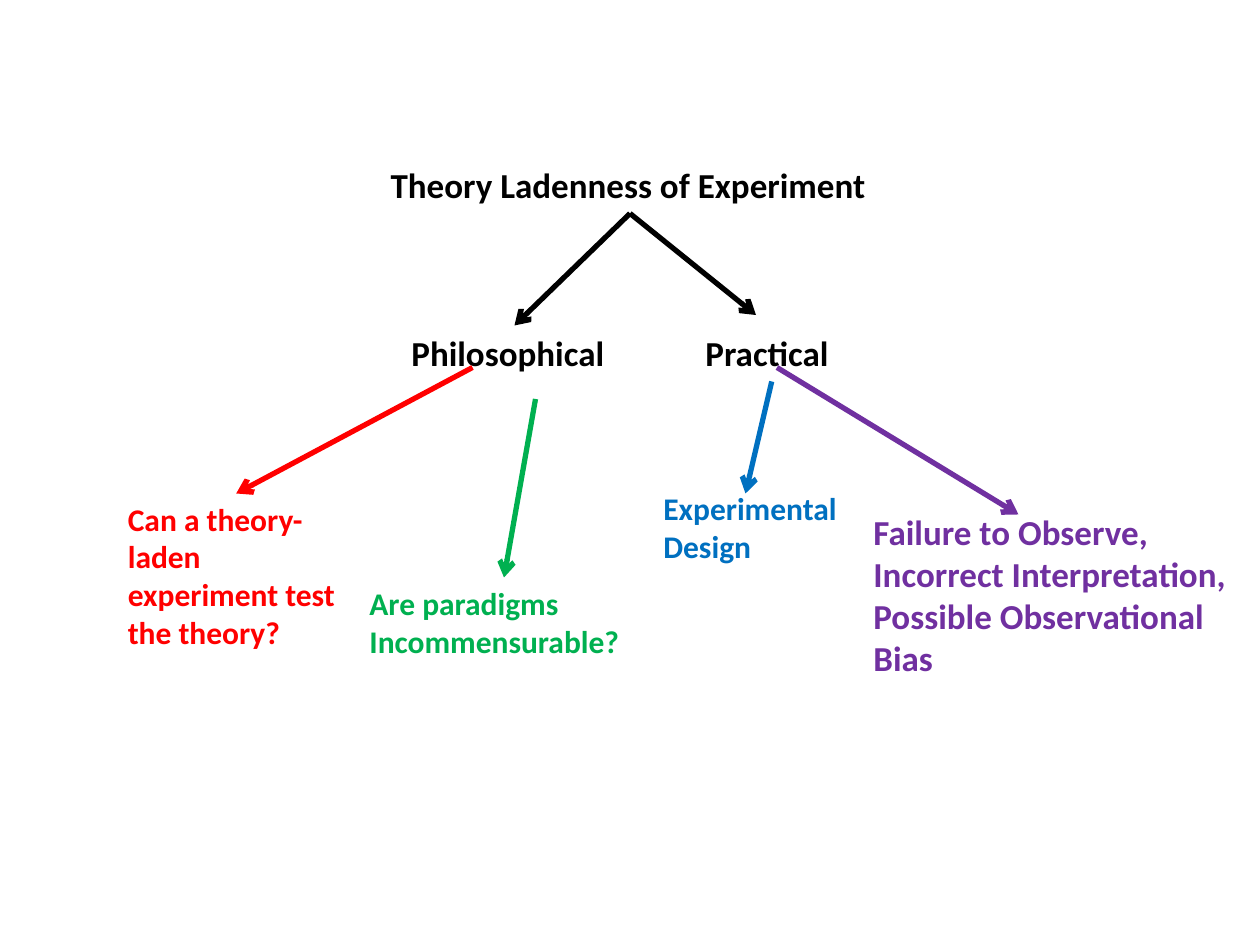
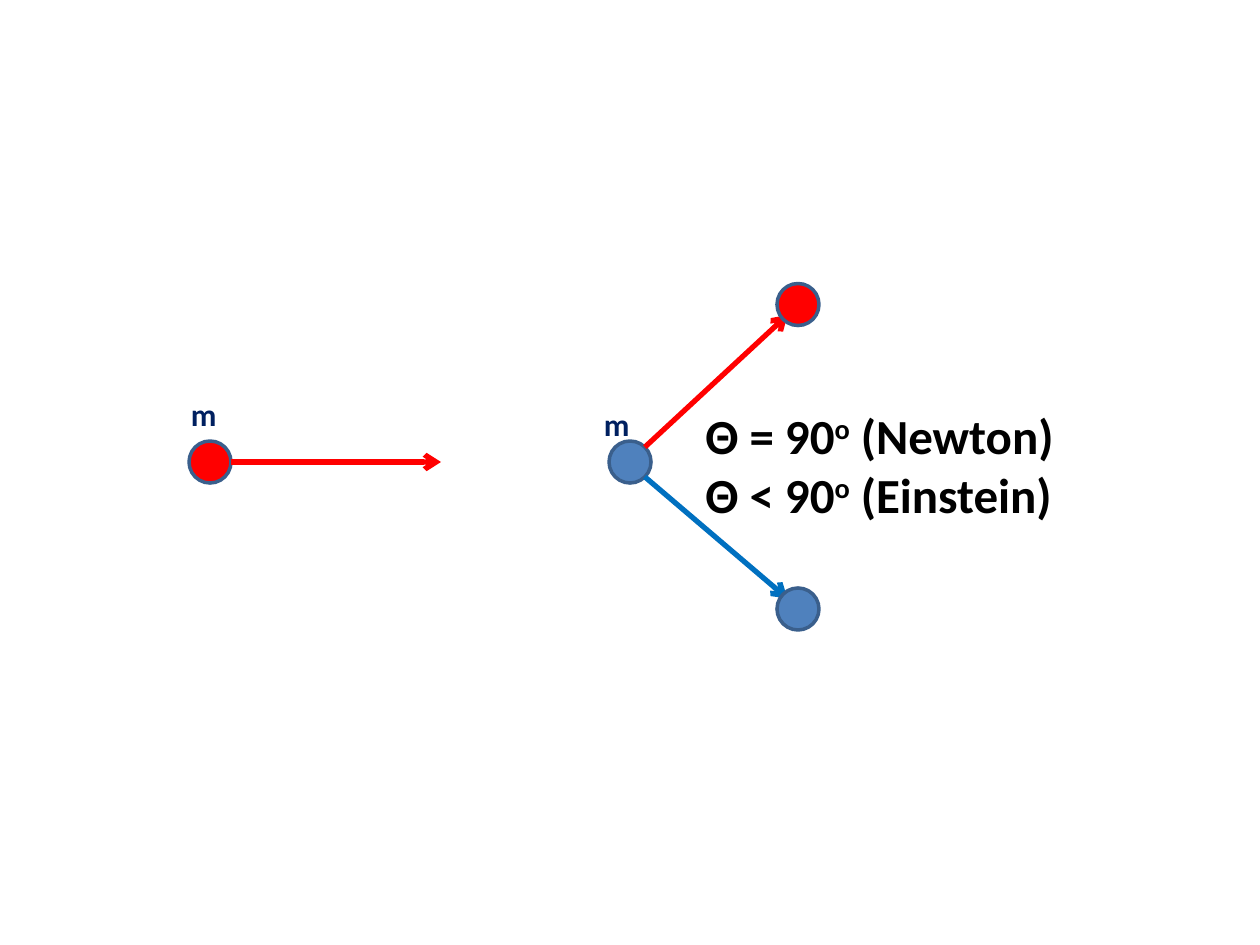
from lxml import etree
from pptx import Presentation
from pptx.dml.color import RGBColor
from pptx.enum import shapes, text
from pptx.oxml import ns
from pptx.util import Pt

COLORS = {
    "black": "000000", "red": "FF0000", "green": "00B050", "blue": "0070C0",
    "purple": "7030A0", "navy": "002060", "steel": "4F81BD", "rim": "3A5F8C",
}
FONT = "Calibri"
LINE_WIDTH = 3
BALL_SIZE = 24

TITLE = ("Theory Ladenness of Experiment", (216, 90, 288, 32), 20, "black")
TOPICS = {
    "philosophical": (["Philosophical"], (228, 186, 126, 32), 20, "black"),
    "practical": (["Practical"], (396, 186, 90, 32), 20, "black"),
    "paradigms": (["Are paradigms Incommensurable?"], (204, 330, 168, 51), 18, "green"),
    "design": (["Experimental Design"], (372, 276, 144, 51), 18, "blue"),
    "bias": (
        ["Failure to Observe,", "Incorrect Interpretation, Possible Observational Bias"],
        (492, 288, 228, 128), 20, "purple",
    ),
    "test": (["Can a theory-laden experiment test the theory?"], (66, 282, 138, 94), 18, "red"),
}
BRANCHES = [
    ((360, 122), (432, 180), "black", "title", None),
    ((360, 122), (294, 186), "black", "title", None),
    ((270, 210), (135, 282), "red", None, "test"),
    ((306, 228), (288, 330), "green", None, "paradigms"),
    ((441, 218), (426, 282), "blue", "practical", None),
    ((444, 210), (582, 294), "purple", None, None),
]

BALLS_BEFORE = [((108, 252), "red"), ((348, 252), "steel")]
BALLS_AFTER = [((444, 162), "red"), ((444, 336), "steel")]
PATHS = [
    ((132, 264), (252, 264), "red"),
    ((368.5, 255.5), (450, 180), "red"),
    ((368.5, 272.5), (450, 342), "blue"),
]
MASS_LABELS = [(102, 222, 36, 29), (338, 228, 42, 29)]
ANGLES = [("Θ = 90", "o", " (Newton)"), ("Θ < 90", "o", " (Einstein)")]
ANGLES_BOX = (396, 228, 228, 109)


def color(name):
    return RGBColor.from_string(COLORS[name])


def points(values):
    return [Pt(value) for value in values]


def format_text(shape, size, color_name):
    frame = shape.text_frame
    frame.word_wrap = True
    frame.auto_size = text.MSO_AUTO_SIZE.SHAPE_TO_FIT_TEXT
    frame.vertical_anchor = text.MSO_ANCHOR.TOP
    for paragraph in frame.paragraphs:
        paragraph.alignment = text.PP_ALIGN.LEFT
        font = paragraph.font
        font.name, font.size, font.bold = FONT, Pt(size), True
        font.color.rgb = color(color_name)


def add_text(slide, lines, box, size, color_name):
    shape = slide.shapes.add_textbox(*points(box))
    shape.text_frame.text = "\n".join(lines)
    format_text(shape, size, color_name)
    return shape


def add_title(slide, wording, box, size, color_name):
    title = slide.shapes.title
    title.left, title.top, title.width, title.height = points(box)
    title.text_frame.text = wording
    format_text(title, size, color_name)
    return title


def add_arrow(slide, start, end, color_name):
    arrow = slide.shapes.add_connector(
        shapes.MSO_CONNECTOR.STRAIGHT, *points(start + end))
    arrow.line.color.rgb = color(color_name)
    arrow.line.width = Pt(LINE_WIDTH)
    etree.SubElement(arrow.line._get_or_add_ln(), ns.qn("a:tailEnd"), type="arrow")
    etree.SubElement(arrow._element.spPr, ns.qn("a:effectLst"))
    return arrow


def add_balls(slide, balls, kind):
    for position, color_name in balls:
        ball = slide.shapes.add_shape(kind, *points(position + (BALL_SIZE, BALL_SIZE)))
        ball.shadow.inherit = False
        ball.fill.solid()
        ball.fill.fore_color.rgb = color(color_name)
        ball.line.color.rgb = color("rim")
        ball.line.width = Pt(2)


def build_theory_tree(presentation):
    slide = presentation.slides.add_slide(presentation.slide_layouts[5])
    nodes = {"title": add_title(slide, *TITLE)}
    for name, topic in TOPICS.items():
        nodes[name] = add_text(slide, *topic)
    for start, end, color_name, source, target in BRANCHES:
        arrow = add_arrow(slide, start, end, color_name)
        if source:
            arrow.begin_connect(nodes[source], 2)
        if target:
            arrow.end_connect(nodes[target], 0)


def build_collision(presentation):
    slide = presentation.slides.add_slide(presentation.slide_layouts[6])
    add_balls(slide, BALLS_BEFORE, shapes.MSO_SHAPE.FLOWCHART_CONNECTOR)
    for path_points in PATHS:
        add_arrow(slide, *path_points)
    for box in MASS_LABELS:
        add_text(slide, ["m"], box, 18, "navy")
    angles = add_text(slide, [""] * len(ANGLES), ANGLES_BOX, 28, "black")
    for paragraph, parts in zip(angles.text_frame.paragraphs, ANGLES):
        runs = [paragraph.add_run() for part in parts]
        for run, part in zip(runs, parts):
            run.text = part
        runs[1]._r.get_or_add_rPr().set("baseline", "30000")
    add_balls(slide, BALLS_AFTER, shapes.MSO_SHAPE.OVAL)


def main():
    presentation = Presentation()
    presentation.slide_width, presentation.slide_height = Pt(720), Pt(540)
    build_theory_tree(presentation)
    build_collision(presentation)
    presentation.save("out.pptx")


if __name__ == "__main__":
    main()
